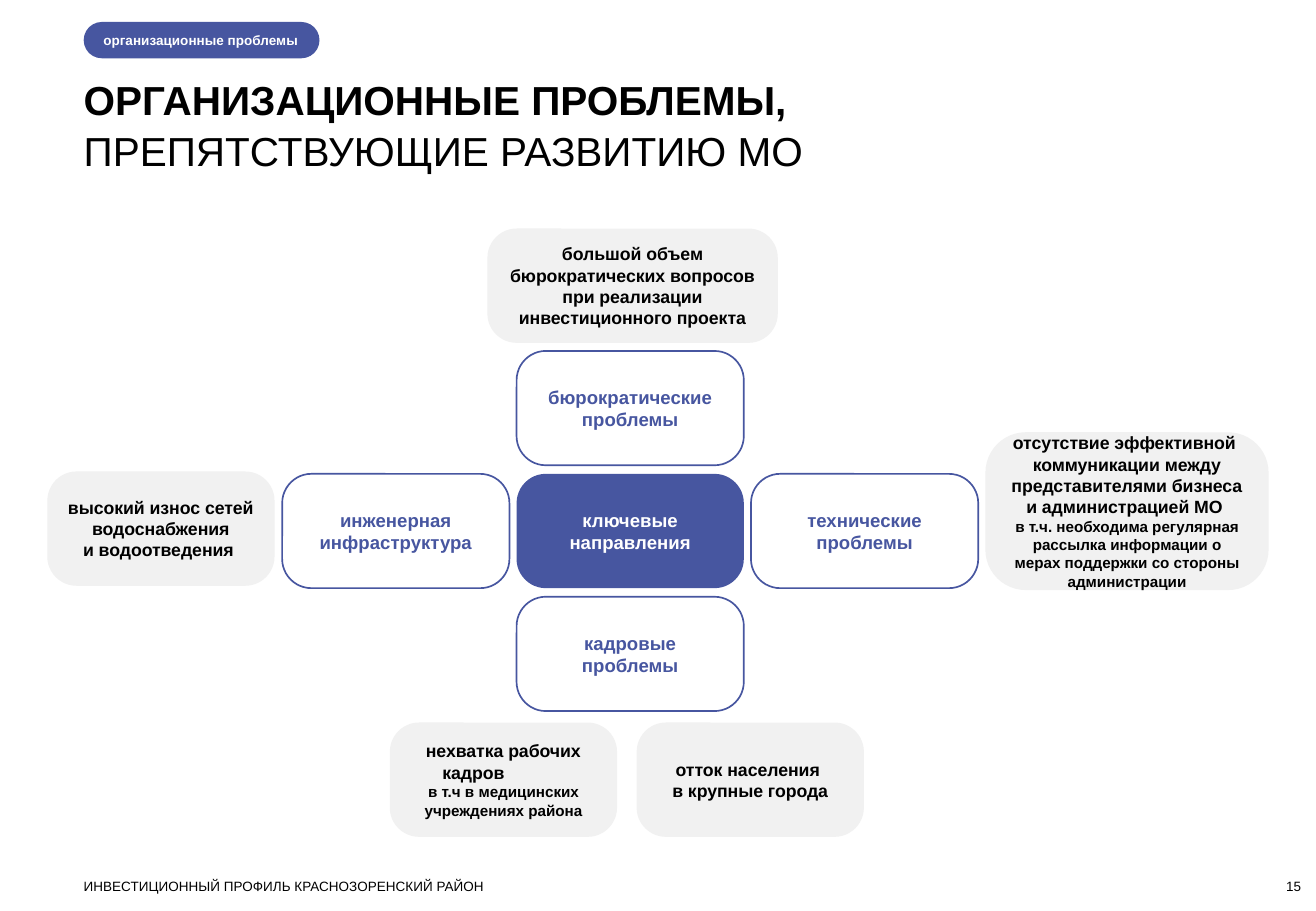
from pptx import Presentation
from pptx.dml.color import RGBColor as Rgb
from pptx.enum.shapes import MSO_SHAPE as Shape
from pptx.enum.text import MSO_ANCHOR as Anchor, MSO_AUTO_SIZE as AutoSize, PP_ALIGN as Align
from pptx.util import Cm, Pt

# Content: each paragraph is (text, style)
TITLE = [("ОРГАНИЗАЦИОННЫЕ ПРОБЛЕМЫ,", "title_bold"),
         ("ПРЕПЯТСТВУЮЩИЕ РАЗВИТИЮ МО", "title")]
TAG = [("организационные проблемы", "tag")]
FOOTER = [("ИНВЕСТИЦИОННЫЙ ПРОФИЛЬ КРАСНОЗОРЕНСКИЙ РАЙОН", "footer")]
PAGE_NUMBER = [("15", "footer")]

# Directions: text, column and row relative to the centre
DIRECTIONS = [
    ("бюрократические проблемы", 0, -1),
    ("инженерная инфраструктура", -1, 0),
    ("технические проблемы", 1, 0),
    ("кадровые проблемы", 0, 1),
]
CENTRE = "ключевые направления"

# Problems: left, top, width, height in cm, then paragraphs
CARD_W, CARD_H = 4.75, 2.39
PROBLEMS = [
    (0.99, 9.86, CARD_W, CARD_H,
     [("высокий износ сетей водоснабжения", "note"), ("и водоотведения ", "note")]),
    (10.19, 4.78, 6.07, CARD_H,
     [("большой объем бюрократических вопросов при реализации "
       "инвестиционного проекта", "note")]),
    (8.15, 15.11, CARD_W, CARD_H,
     [("нехватка рабочих", "note"), ("кадров", "note_indented"),
      ("в т.ч в медицинских учреждениях района", "detail")]),
    (13.31, 15.11, CARD_W, CARD_H,
     [("отток населения ", "note"), ("в крупные города", "note")]),
    (20.6, 9.04, 5.92, 3.3,
     [("отсутствие эффективной ", "note"),
      ("коммуникации между представителями бизнеса и администрацией МО ", "note"),
      ("в т.ч. необходима регулярная рассылка информации о мерах поддержки "
       "со стороны администрации", "detail")]),
]

# Theme
BLUE, GREY, BLACK, WHITE = (Rgb.from_string(c) for c in ("4756A0", "F1F1F1", "000000", "FFFFFF"))
THEME = {
    "title_bold": dict(size=Pt(24), bold=True, color=BLACK),
    "title": dict(size=Pt(24), bold=False, color=BLACK),
    "tag": dict(size=Pt(8), bold=True, color=WHITE),
    "footer": dict(size=Pt(8), bold=False, color=BLACK),
    "centre": dict(size=Pt(11), bold=True, color=WHITE),
    "direction": dict(size=Pt(11), bold=True, color=BLUE),
    "note": dict(size=Pt(10.5), bold=True, color=BLACK),
    "note_indented": dict(size=Pt(10.5), bold=True, color=BLACK),
    "detail": dict(size=Pt(9), bold=True, color=BLACK),
}
FONT = "Arial"
ROUNDING = 0.256
MARGIN_LEFT = 1.75
CENTRE_LEFT, CENTRE_TOP = 10.8, 9.91
STEP_X, STEP_Y = 4.9, 2.57
NO_INSETS = (0, 0, 0, 0)
CARD_INSETS = (0.25, 0.13, 0.25, 0.13)


def write(box, paragraphs, insets=NO_INSETS, align=Align.LEFT, anchor=Anchor.TOP, spacing=1.0):
    frame = box.text_frame
    left, top, right, bottom = map(Cm, insets)
    settings = dict(auto_size=AutoSize.NONE, word_wrap=True, vertical_anchor=anchor,
                    margin_left=left, margin_top=top, margin_right=right, margin_bottom=bottom)
    for name, value in settings.items():
        setattr(frame, name, value)
    for index, (text, style) in enumerate(paragraphs):
        para = frame.add_paragraph() if index else frame.paragraphs[0]
        layout = dict(alignment=align, line_spacing=spacing, space_before=Pt(0), space_after=Pt(0))
        for name, value in layout.items():
            setattr(para, name, value)
        if style == "note_indented":
            para.alignment = Align.LEFT
            para._p.get_or_add_pPr().set("marL", str(Cm(0.67)))
        span = para.add_run()
        span.text = text
        look = dict(THEME[style], name=FONT)
        span.font.color.rgb = look.pop("color")
        for name, value in look.items():
            setattr(span.font, name, value)


def add_rounded(page, place, fill=None, line=None, rounding=ROUNDING):
    box = page.shapes.add_shape(Shape.ROUNDED_RECTANGLE, *map(Cm, place))
    box.adjustments[0] = rounding
    box.shadow.inherit = False
    if fill is None:
        box.fill.background()
    else:
        box.fill.solid()
        box.fill.fore_color.rgb = fill
    if line is None:
        box.line.fill.background()
    else:
        box.line.color.rgb = line
        box.line.width = Pt(1)
    return box


def add_card(page, place, paragraphs, **outline):
    write(add_rounded(page, place, **outline), paragraphs, CARD_INSETS, Align.CENTER, Anchor.MIDDLE)


def main():
    deck = Presentation()
    deck.slide_width, deck.slide_height = Cm(27.51), Cm(19.05)
    page = deck.slides.add_slide(deck.slide_layouts[5])

    # Title and tag
    title = page.shapes.title
    title.left, title.top, title.width, title.height = map(Cm, (MARGIN_LEFT, 1.52, 25.45, 2.06))
    write(title, TITLE, spacing=1.05)
    tag = add_rounded(page, (MARGIN_LEFT, 0.46, 4.93, 0.76), fill=BLUE, rounding=0.5)
    write(tag, TAG, (0.3, 0, 0, 0), anchor=Anchor.MIDDLE)

    # Problems
    for *place, paragraphs in PROBLEMS:
        add_card(page, place, paragraphs, fill=GREY)

    # Centre and the four directions around it
    add_card(page, (CENTRE_LEFT, CENTRE_TOP, CARD_W, CARD_H), [(CENTRE, "centre")], fill=BLUE)
    for text, column, row in DIRECTIONS:
        place = (CENTRE_LEFT + column * STEP_X, CENTRE_TOP + row * STEP_Y, CARD_W, CARD_H)
        add_card(page, place, [(text, "direction")], line=BLUE)

    # Footer and page number
    for left, width, paragraphs, align in ((MARGIN_LEFT, 20.32, FOOTER, Align.LEFT),
                                           (25.17, 2.03, PAGE_NUMBER, Align.RIGHT)):
        box = page.shapes.add_textbox(*map(Cm, (left, 18.36, width, 0.33)))
        write(box, paragraphs, align=align)

    deck.save("out.pptx")


if __name__ == "__main__":
    main()
